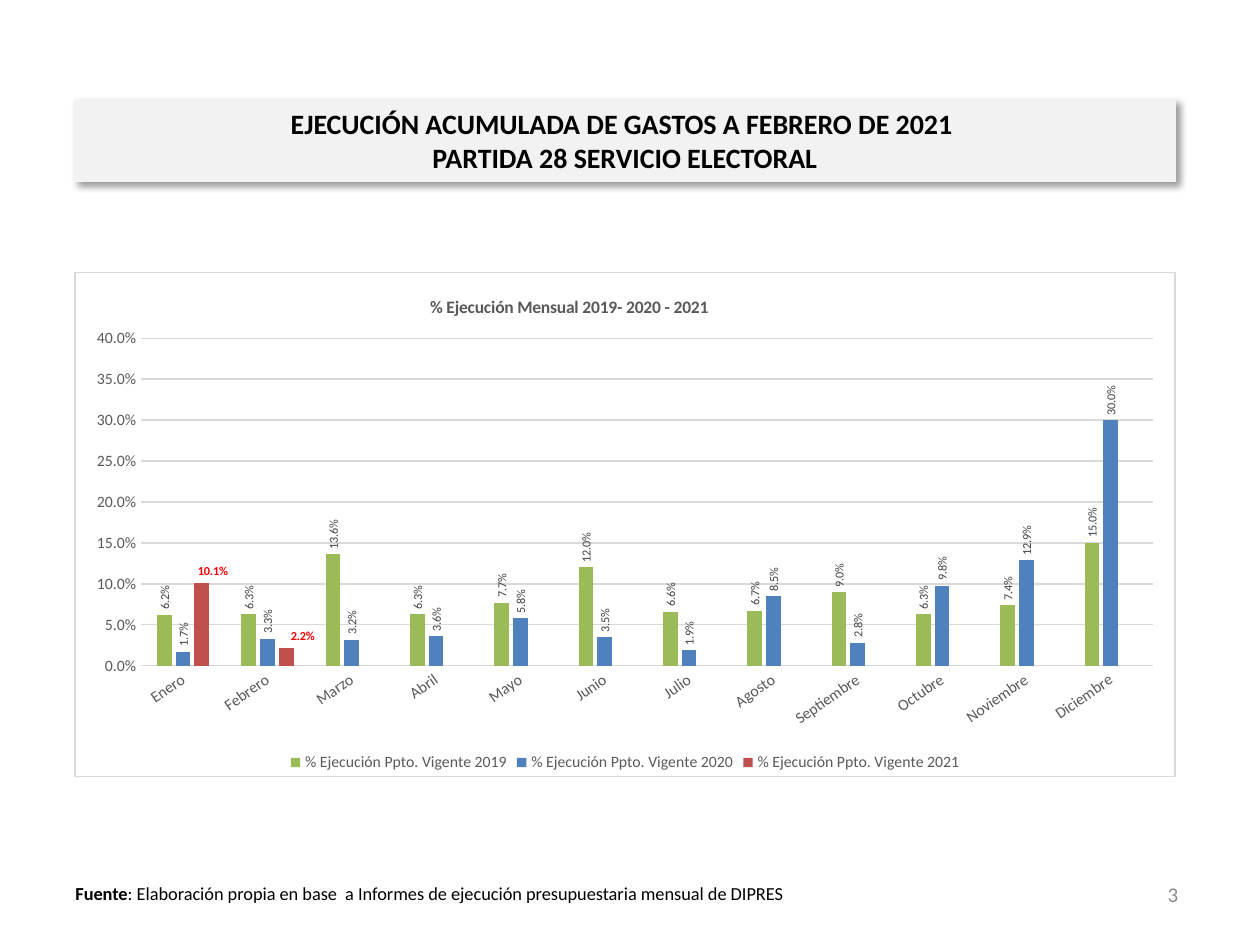
from lxml.etree import fromstring
from pptx import Presentation
from pptx.chart.data import CategoryChartData
from pptx.dml.color import RGBColor
from pptx.enum.chart import XL_CHART_TYPE, XL_LABEL_POSITION, XL_LEGEND_POSITION, XL_TICK_MARK
from pptx.enum.text import MSO_ANCHOR, PP_ALIGN
from pptx.oxml.ns import qn
from pptx.util import Inches, Pt

THEME = {
    "font": "Calibri",
    "black": "000000", "axis": "595959", "label": "404040", "highlight": "FF0000",
    "number": "8C8C8C", "banner": "F2F2F2", "grid": "D9D9D9", "white": "FFFFFF",
    "title_size": 16, "number_size": 12, "source_size": 10.5,
    "chart_size": 10, "axis_size": 9, "label_size": 7, "line": 0.75,
}
NAMESPACES = ('xmlns:a="http://schemas.openxmlformats.org/drawingml/2006/main" '
              'xmlns:c="http://schemas.openxmlformats.org/drawingml/2006/chart"')

TITLE_LINES = ["EJECUCIÓN ACUMULADA DE GASTOS A FEBRERO DE 2021 ", "PARTIDA 28 SERVICIO ELECTORAL"]
SOURCE = [("Fuente", True),
          (": Elaboración propia en base  a Informes de ejecución presupuestaria mensual de DIPRES", False)]
PAGE_NUMBER = "3"
CHART_TITLE = "% Ejecución Mensual 2019- 2020 - 2021"
MONTHS = ["Enero", "Febrero", "Marzo", "Abril", "Mayo", "Junio", "Julio", "Agosto",
          "Septiembre", "Octubre", "Noviembre", "Diciembre"]
SERIES = [
    {"year": 2019, "color": "9BBB59", "percent":
        [6.2, 6.3, 13.6, 6.3, 7.7, 12.0, 6.6, 6.7, 9.0, 6.3, 7.4, 15.0]},
    {"year": 2020, "color": "4F81BD", "percent":
        [1.7, 3.3, 3.2, 3.6, 5.8, 3.5, 1.9, 8.5, 2.8, 9.8, 12.9, 30.0]},
    {"year": 2021, "color": "C0504D", "percent": [10.1, 2.2], "label_shifts": [0.01, 0.015]},
]
LEFT, WIDTH = 0.59, 8.74
BOXES = {
    "title": (LEFT, 0.79, WIDTH, 0.65),
    "chart": (LEFT, 2.16, WIDTH, 4.01),
    "source": (0.5, 6.95, 5.91, 0.28),
    "number": (7.12, 6.9, 2.33, 0.4),
}


def box(name):
    return [Inches(length) for length in BOXES[name]]


def style_font(font, size, color, bold=False):
    font.name = THEME["font"]
    font.size = Pt(size)
    font.bold = bold
    font.color.rgb = RGBColor.from_string(color)


def add_run(paragraph, text, size, color, bold=False):
    run = paragraph.add_run()
    run.text = text
    style_font(run.font, size, color, bold)


def paint(target, color):
    target.solid()
    target.fore_color.rgb = RGBColor.from_string(color)


def draw_line(line, color):
    paint(line.fill, color)
    line.width = Pt(THEME["line"])


def manual_layout(target, **places):
    """Return a chart layout element; target is 'inner' for the plot area."""
    parts = '<c:layoutTarget val="inner"/>' if target == "inner" else ""
    if target:
        parts += '<c:xMode val="edge"/><c:yMode val="edge"/>'
    parts += "".join(f'<c:{name} val="{value}"/>' for name, value in places.items())
    return fromstring(f"<c:layout {NAMESPACES}><c:manualLayout>{parts}</c:manualLayout></c:layout>")


def set_layout(parent, layout, index):
    for old in parent.findall(qn("c:layout")):
        parent.remove(old)
    parent.insert(index, layout)


def rotate_text(element, degrees):
    body = element.find(qn("c:txPr")).find(qn("a:bodyPr"))
    body.set("rot", str(degrees * 60000))
    body.set("vert", "horz")


def add_title(slide):
    title = slide.shapes.title
    title.left, title.top, title.width, title.height = box("title")
    paint(title.fill, THEME["banner"])
    draw_line(title.line, THEME["banner"])
    title._element.spPr.append(fromstring(
        f'<a:effectLst {NAMESPACES}><a:outerShdw blurRad="50800" dist="38100" dir="2700000" '
        'algn="tl" rotWithShape="0"><a:srgbClr val="000000"><a:alpha val="40000"/>'
        '</a:srgbClr></a:outerShdw></a:effectLst>'))
    frame = title.text_frame
    frame.word_wrap = True
    frame.vertical_anchor = MSO_ANCHOR.MIDDLE
    frame.margin_left = frame.margin_right = Inches(0.11)
    paragraph = frame.paragraphs[0]
    paragraph.alignment = PP_ALIGN.CENTER
    for index, text in enumerate(TITLE_LINES):
        if index:
            paragraph.add_line_break()
        add_run(paragraph, text, THEME["title_size"], THEME["black"], True)


def add_text(slide, name, runs, size, color, alignment, anchor):
    frame = slide.shapes.add_textbox(*box(name)).text_frame
    frame.word_wrap = True
    frame.vertical_anchor = anchor
    paragraph = frame.paragraphs[0]
    paragraph.alignment = alignment
    for text, bold in runs:
        add_run(paragraph, text, size, color, bold)


def style_axes(chart):
    for axis in (chart.category_axis, chart.value_axis):
        axis.major_tick_mark = axis.minor_tick_mark = XL_TICK_MARK.NONE
        style_font(axis.tick_labels.font, THEME["axis_size"], THEME["axis"])
    draw_line(chart.category_axis.format.line, THEME["grid"])
    rotate_text(chart.category_axis._element, -35)
    values = chart.value_axis
    values.minimum_scale, values.maximum_scale, values.major_unit = 0, 0.4, 0.05
    values.tick_labels.number_format = "0.0%"
    values.tick_labels.number_format_is_linked = False
    values.format.line.fill.background()
    draw_line(values.major_gridlines.format.line, THEME["grid"])


def style_series(series, content):
    paint(series.format.fill, content["color"])
    series.invert_if_negative = False
    shifts = content.get("label_shifts", [])
    color = THEME["highlight"] if shifts else THEME["label"]
    labels = series.data_labels
    labels.show_value = True
    labels.number_format = "0.0%"
    labels.number_format_is_linked = False
    labels.position = XL_LABEL_POSITION.OUTSIDE_END
    style_font(labels.font, THEME["label_size"], color, bool(shifts))
    if not shifts:
        rotate_text(labels._element, -90)
    for index, shift in enumerate(shifts):
        label = series.points[index].data_label
        style_font(label.font, THEME["label_size"], color, True)
        label.position = XL_LABEL_POSITION.OUTSIDE_END
        set_layout(labels._element.findall(qn("c:dLbl"))[index],
                   manual_layout(None, x=shift, y=0), 1)


def add_chart(slide):
    data = CategoryChartData(number_format="0.0%")
    data.categories = MONTHS
    for content in SERIES:
        values = [round(value / 100, 3) for value in content["percent"]]
        values += [None] * (len(MONTHS) - len(values))
        data.add_series(f"% Ejecución Ppto. Vigente {content['year']}", values)
    chart = slide.shapes.add_chart(XL_CHART_TYPE.COLUMN_CLUSTERED, *box("chart"), data).chart
    style_font(chart.font, THEME["chart_size"], THEME["black"])
    chart.has_title = True
    add_run(chart.chart_title.text_frame.paragraphs[0], CHART_TITLE,
            THEME["chart_size"], THEME["axis"], True)
    set_layout(chart.chart_title._element, manual_layout("edge", x=0.32, y=0.04), 1)
    chart.has_legend = True
    chart.legend.position = XL_LEGEND_POSITION.BOTTOM
    chart.legend.include_in_layout = False
    style_font(chart.legend.font, THEME["axis_size"], THEME["axis"])
    style_axes(chart)
    plot = chart.plots[0]
    plot.gap_width, plot.overlap, plot.vary_by_categories = 219, -27, False
    for series, content in zip(plot.series, SERIES):
        style_series(series, content)
    chart_part = chart._chartSpace.find(qn("c:chart"))
    set_layout(chart_part.find(qn("c:plotArea")),
               manual_layout("inner", x=0.06, y=0.13, w=0.92, h=0.65), 0)
    chart_part.addnext(fromstring(
        f'<c:spPr {NAMESPACES}><a:solidFill><a:srgbClr val="{THEME["white"]}"/></a:solidFill>'
        f'<a:ln w="{Pt(THEME["line"])}"><a:solidFill><a:srgbClr val="{THEME["grid"]}"/>'
        '</a:solidFill></a:ln></c:spPr>'))


def main():
    presentation = Presentation()
    presentation.slide_width, presentation.slide_height = Inches(10), Inches(7.5)
    slide = presentation.slides.add_slide(presentation.slide_layouts[5])
    add_text(slide, "source", SOURCE, THEME["source_size"], THEME["black"],
             PP_ALIGN.LEFT, MSO_ANCHOR.TOP)
    add_text(slide, "number", [(PAGE_NUMBER, False)], THEME["number_size"], THEME["number"],
             PP_ALIGN.RIGHT, MSO_ANCHOR.MIDDLE)
    add_title(slide)
    add_chart(slide)
    presentation.save("out.pptx")


if __name__ == "__main__":
    main()
